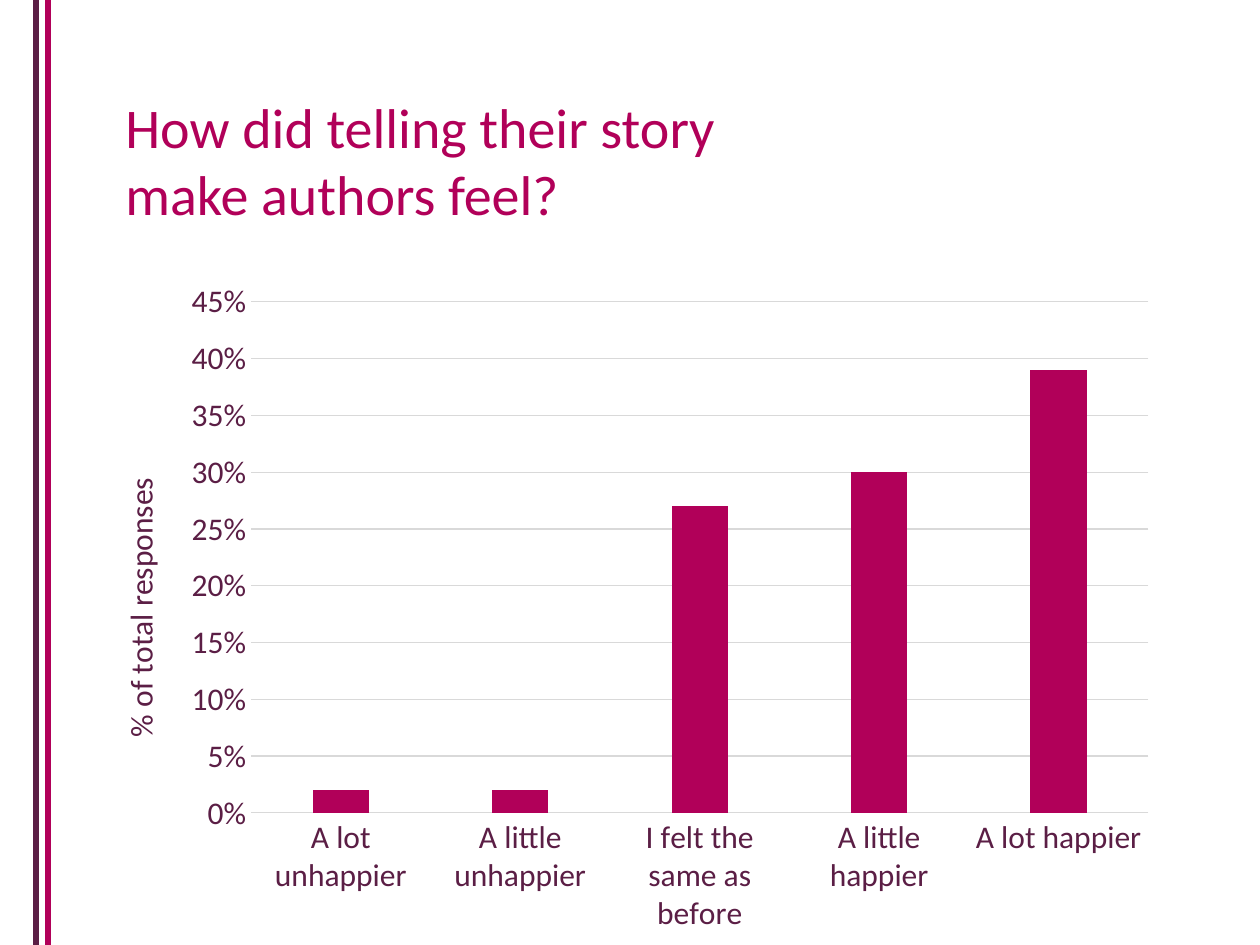
from lxml import etree
from pptx import Presentation
from pptx import util as u
from pptx.chart import data as cd
from pptx.dml import color as dc
from pptx.enum import chart as ec, shapes, text
from pptx.oxml import ns

PX = 914400 / 126
WIDE, HIGH = 1260, 945
PLUM, PINK, GREY = "5B1E45", "B10059", "D9D9D9"
FEEL = {
    "A lot unhappier": 0.02,
    "A little unhappier": 0.02,
    "I felt the same as before": 0.27,
    "A little happier": 0.3,
    "A lot happier": 0.39,
}


def px(*nums):
    """Turn pixel lengths into EMU."""
    return [u.Emu(round(n * PX)) for n in nums]


def rgb(code):
    """Turn a hex string into a colour."""
    return dc.RGBColor.from_string(code)


def put(obj, **vals):
    """Set each given attribute on an object."""
    for key, val in vals.items():
        setattr(obj, key, val)


def style(font, size, code):
    """Give a font its face, size and colour."""
    put(font, name="Calibri", size=u.Pt(size), bold=False)
    font.color.rgb = rgb(code)


def stroke(line, code, width):
    """Give a line its colour and width."""
    line.color.rgb = rgb(code)
    line.width = u.Pt(width)


def add_rule(slide, x, code):
    """Draw a full-height vertical rule."""
    rule = slide.shapes.add_connector(
        shapes.MSO_CONNECTOR.STRAIGHT, *px(x, 0, x, HIGH))
    stroke(rule.line, code, 3)
    etree.SubElement(rule._element.spPr, ns.qn("a:effectLst"))


def add_title(slide, words, *box):
    """Add the heading text."""
    frame = slide.shapes.add_textbox(*px(*box)).text_frame
    put(frame, word_wrap=True, auto_size=text.MSO_AUTO_SIZE.SHAPE_TO_FIT_TEXT)
    run = frame.paragraphs[0].add_run()
    run.text = words
    style(run.font, 32, PINK)


def set_plot(chart, **part):
    """Fix the inner plot area as fractions of the chart."""
    area = chart._chartSpace.chart.plotArea
    for old in area.findall(ns.qn("c:layout")):
        area.remove(old)
    layout = etree.Element(ns.qn("c:layout"))
    area.insert(0, layout)
    manual = etree.SubElement(layout, ns.qn("c:manualLayout"))
    vals = {"layoutTarget": "inner", "xMode": "edge", "yMode": "edge", **part}
    for key, val in vals.items():
        etree.SubElement(manual, ns.qn("c:" + key)).set("val", str(val))


def set_axes(chart):
    """Format both axes, the grid and the axis title."""
    cat, val = chart.category_axis, chart.value_axis
    for axis in (cat, val):
        put(axis, major_tick_mark=ec.XL_TICK_MARK.NONE,
            minor_tick_mark=ec.XL_TICK_MARK.NONE)
        style(axis.tick_labels.font, 18, PLUM)
    stroke(cat.format.line, GREY, 0.75)
    val.format.line.fill.background()
    stroke(val.major_gridlines.format.line, GREY, 0.75)
    put(val, minimum_scale=0, maximum_scale=0.45, major_unit=0.05)
    put(val.tick_labels, number_format="0%", number_format_is_linked=False)
    run = val.axis_title.text_frame.paragraphs[0].add_run()
    run.text = "% of total responses"
    style(run.font, 18, PLUM)


def add_bars(slide, *box):
    """Add the column chart of the answers."""
    data = cd.CategoryChartData(number_format="0%")
    data.categories = list(FEEL)
    data.add_series("Series 1", list(FEEL.values()))
    chart = slide.shapes.add_chart(
        ec.XL_CHART_TYPE.COLUMN_CLUSTERED, *px(*box), data).chart
    put(chart, has_legend=False, has_title=False)
    style(chart.font, 10, "000000")
    plot = chart.plots[0]
    put(plot, gap_width=219, overlap=-27, vary_by_categories=False)
    fill = plot.series[0].format.fill
    fill.solid()
    fill.fore_color.rgb = rgb(PINK)
    set_axes(chart)
    set_plot(chart, x=0.15, y=0.05, w=0.83, h=0.755)


def main():
    """Build and save the slide."""
    deck = Presentation()
    deck.slide_width, deck.slide_height = px(WIDE, HIGH)
    slide = deck.slides.add_slide(deck.slide_layouts[6])
    for x, code in ((36, PLUM), (48, PINK)):
        add_rule(slide, x, code)
    add_title(slide, "How did telling their story make authors feel?",
              113, 86, 640, 149)
    add_bars(slide, 89, 268, 1081, 677)
    deck.save("out.pptx")


if __name__ == "__main__":
    main()
